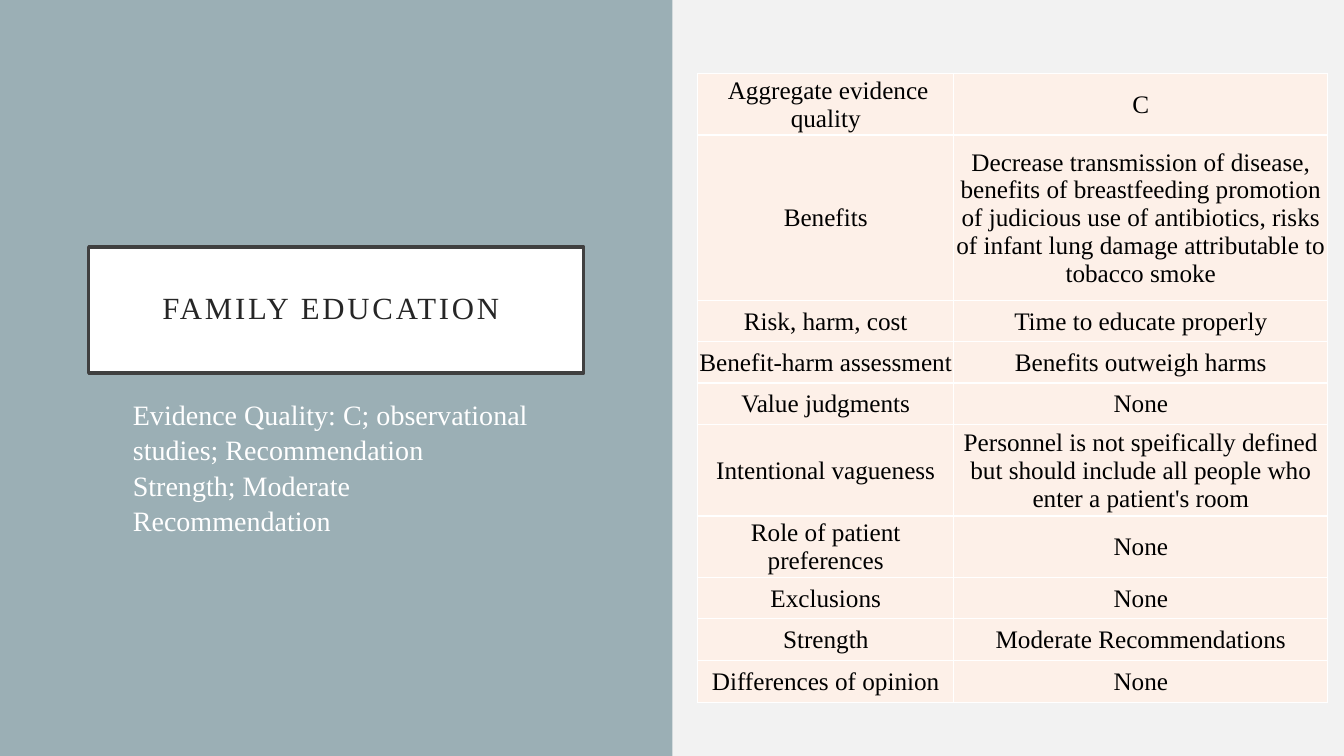
from dataclasses import dataclass

from lxml import etree
from pptx import Presentation
from pptx.dml.color import RGBColor
from pptx.enum import shapes, text
from pptx.oxml import ns
from pptx.util import Inches, Pt


@dataclass(frozen=True)
class Theme:
    font: str = "Times New Roman"
    background: str = "F2F2F2"
    panel: str = "9BAFB5"
    white: str = "FFFFFF"
    frame: str = "404040"
    title_ink: str = "262626"
    table_ink: str = "000000"
    cell: str = "FDF0E8"
    title_size: int = 22
    body_size: int = 20
    table_size: int = 18


@dataclass(frozen=True)
class EvidenceRow:
    label: str
    finding: str
    height: float = 0.41


THEME = Theme()
COLUMN_WIDTHS = (2.54, 3.71)
EVIDENCE = (
    EvidenceRow(" Aggregate evidence quality", "C", 0.42),
    EvidenceRow(
        "Benefits",
        "Decrease transmission of disease, benefits of breastfeeding promotion of judicious "
        "use of antibiotics, risks of infant lung damage attributable to tobacco smoke",
        1.64,
    ),
    EvidenceRow("Risk, harm, cost", "Time to educate properly"),
    EvidenceRow("Benefit-harm assessment", "Benefits outweigh harms"),
    EvidenceRow("Value judgments", "None"),
    EvidenceRow(
        "Intentional vagueness",
        "Personnel is not speifically defined but should include all people who enter "
        "a patient's room",
        0.82,
    ),
    EvidenceRow("Role of patient preferences", "None"),
    EvidenceRow("Exclusions", "None"),
    EvidenceRow("Strength", "Moderate Recommendations"),
    EvidenceRow("Differences of opinion", "None", 0.42),
)


def paint(fill, color: str) -> None:
    fill.solid()
    fill.fore_color.rgb = RGBColor.from_string(color)


def write(frame, content: str, *, size: int, color: str, align=text.PP_ALIGN.CENTER,
          line_spacing: float = 1.0, tracking: float = 0) -> None:
    para = frame.paragraphs[0]
    para.alignment = align
    para.line_spacing = line_spacing
    span = para.add_run()
    span.text = content
    span.font.name = THEME.font
    span.font.size = Pt(size)
    span.font.bold = False
    span.font.color.rgb = RGBColor.from_string(color)
    if tracking:
        span.font._element.set("spc", str(round(tracking * 100)))


def set_margins(target, left: float, top: float, right: float, bottom: float) -> None:
    target.margin_left, target.margin_top = Inches(left), Inches(top)
    target.margin_right, target.margin_bottom = Inches(right), Inches(bottom)


def border_cell(cell, color: str, width: float) -> None:
    properties = cell._tc.get_or_add_tcPr()
    for position, side in enumerate(("lnL", "lnR", "lnT", "lnB")):
        line = etree.Element(ns.qn(f"a:{side}"), w=str(Pt(width)))
        solid = etree.SubElement(line, ns.qn("a:solidFill"))
        etree.SubElement(solid, ns.qn("a:srgbClr"), val=color)
        properties.insert(position, line)


def add_title(page) -> None:
    title = page.shapes.title
    title.left, title.top = Inches(0.88), Inches(2.45)
    title.width, title.height = Inches(4.91), Inches(1.25)
    paint(title.fill, THEME.white)
    paint(title.line.fill, THEME.frame)
    title.line.width = Pt(2.5)
    frame = title.text_frame
    frame.word_wrap = True
    frame.auto_size = text.MSO_AUTO_SIZE.NONE
    frame.vertical_anchor = text.MSO_ANCHOR.MIDDLE
    set_margins(frame, 0.2, 0.2, 0.2, 0.2)
    write(frame, "FAMILY EDUCATION ", size=THEME.title_size, color=THEME.title_ink,
          line_spacing=0.9, tracking=2)


def add_panel(page) -> None:
    panel = page.shapes.add_shape(shapes.MSO_SHAPE.RECTANGLE, 0, 0, Inches(6.67), Inches(7.5))
    panel.shadow.inherit = False
    paint(panel.fill, THEME.panel)
    panel.line.fill.background()
    # The panel lies behind the title
    page.shapes.title.element.addprevious(panel.element)


def add_evidence_table(page) -> None:
    holder = page.shapes.add_table(
        len(EVIDENCE), len(COLUMN_WIDTHS), Inches(6.92), Inches(0.73),
        Inches(sum(COLUMN_WIDTHS)), Inches(sum(row.height for row in EVIDENCE)))
    table = holder.table
    table.first_row = table.horz_banding = False
    for column, width in zip(table.columns, COLUMN_WIDTHS):
        column.width = Inches(width)
    for table_row, entry in zip(table.rows, EVIDENCE):
        table_row.height = Inches(entry.height)
        for cell, content in zip(table_row.cells, (entry.label, entry.finding)):
            paint(cell.fill, THEME.cell)
            border_cell(cell, THEME.white, 1)
            cell.vertical_anchor = text.MSO_ANCHOR.MIDDLE
            set_margins(cell, 0.01, 0.01, 0.01, 0)
            write(cell.text_frame, content, size=THEME.table_size, color=THEME.table_ink)


def add_summary(page) -> None:
    box = page.shapes.add_textbox(Inches(1.22), Inches(3.88), Inches(4.13), Inches(2.4))
    box.text_frame.word_wrap = True
    write(box.text_frame,
          "Evidence Quality: C; observational studies; Recommendation Strength; "
          "Moderate Recommendation",
          size=THEME.body_size, color=THEME.white, align=text.PP_ALIGN.LEFT, line_spacing=1.05)


def main() -> None:
    deck = Presentation()
    deck.slide_width, deck.slide_height = Inches(13.33), Inches(7.5)
    page = deck.slides.add_slide(deck.slide_layouts.get_by_name("Title Only"))
    paint(page.background.fill, THEME.background)

    # Left half: panel, framed title and summary
    add_panel(page)
    add_title(page)
    add_summary(page)

    # Right half: evidence profile
    add_evidence_table(page)
    deck.save("out.pptx")


if __name__ == "__main__":
    main()
